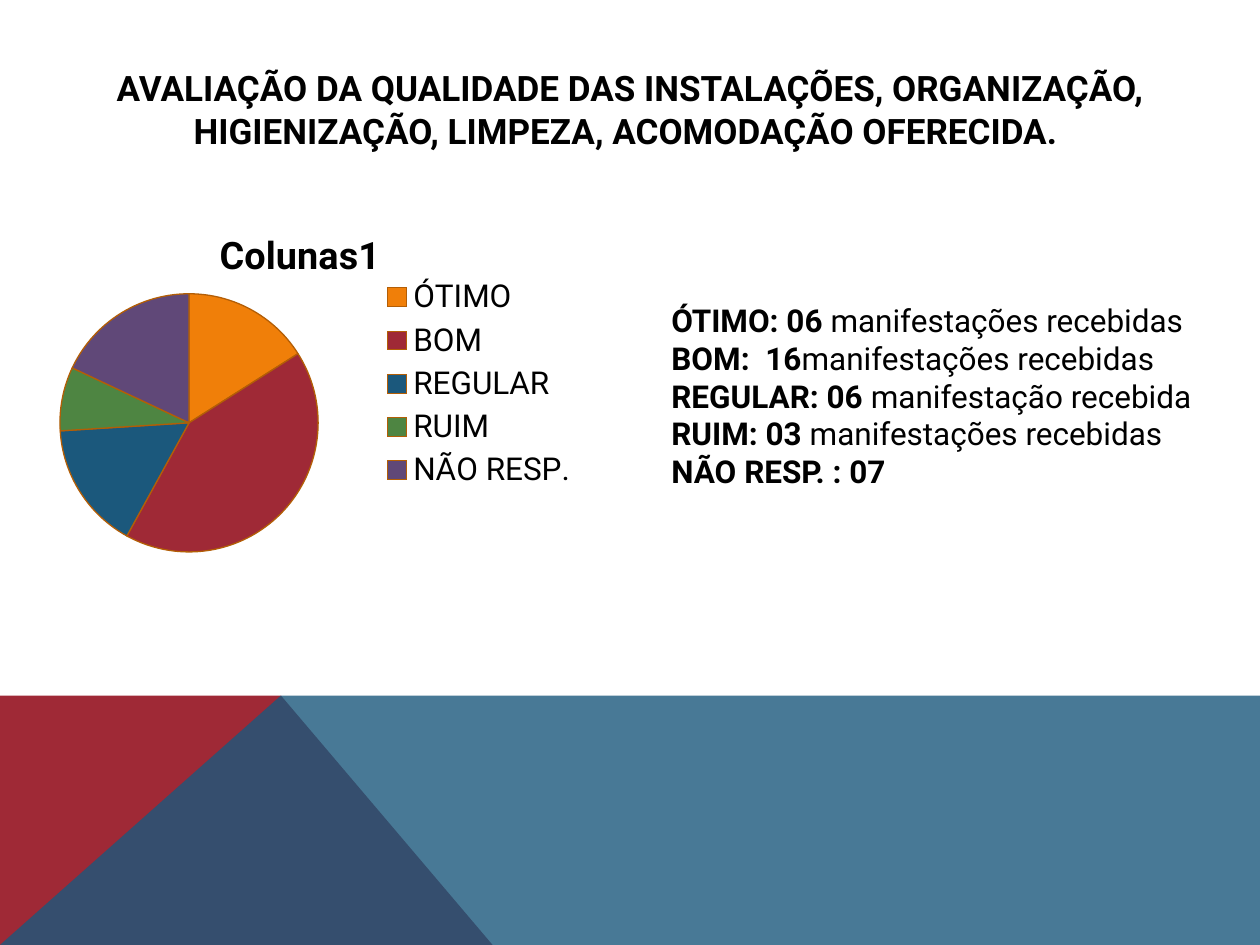
from lxml.etree import SubElement
from pptx import Presentation
from pptx.chart.data import CategoryChartData
from pptx.dml.color import RGBColor
from pptx.enum.chart import XL_CHART_TYPE, XL_LEGEND_POSITION
from pptx.enum.text import MSO_ANCHOR, PP_ALIGN
from pptx.oxml import parse_xml
from pptx.oxml.ns import nsdecls, qn
from pptx.util import Inches, Pt

COLORS = {
    "text": "000000", "orange": "F07F09", "red": "9F2936", "blue": "1B587C",
    "green": "4E8542", "purple": "604878", "outline": "B35E06",
}
FONT = "Roboto"
TITLE = ("AVALIAÇÃO DA QUALIDADE DAS INSTALAÇÕES, ORGANIZAÇÃO, "
         "HIGIENIZAÇÃO, LIMPEZA, ACOMODAÇÃO OFERECIDA. ")
RATINGS = [
    ("ÓTIMO", 16, "orange"), ("BOM", 42, "red"), ("REGULAR", 16, "blue"),
    ("RUIM", 8, "green"), ("NÃO RESP.", 18, "purple"),
]
COUNTS = [
    ("ÓTIMO: 06", " manifestações recebidas"),
    ("BOM:  16", "manifestações recebidas"),
    ("REGULAR: 06 ", "manifestação recebida"),
    ("RUIM: 03", " manifestações recebidas"),
    ("NÃO RESP. : 07", ""),
]


def rgb(name):
    """Return the named colour."""
    return RGBColor.from_string(COLORS[name])


def style_font(font, size, bold=False):
    """Apply the slide's typeface and text colour."""
    font.name, font.size, font.bold = FONT, Pt(size), bold
    font.color.rgb = rgb("text")


def add_run(paragraph, text, size, bold):
    """Append one styled run."""
    run = paragraph.add_run()
    run.text = text
    style_font(run.font, size, bold)


def add_band(slide, points, color, opacity=100):
    """Draw one filled polygon of the footer."""
    corners = [(Inches(x), Inches(y)) for x, y in points]
    builder = slide.shapes.build_freeform(*corners[0], scale=1.0)
    builder.add_line_segments(corners[1:], close=True)
    band = builder.convert_to_shape()
    band.shadow.inherit = False
    band.fill.solid()
    band.fill.fore_color.rgb = rgb(color)
    band.line.fill.background()
    if opacity < 100:
        fill_color = band.fill._xPr.find(qn("a:solidFill"))[0]
        SubElement(fill_color, qn("a:alpha"), val=str(opacity * 1000))


def add_footer(slide, left, top, width, height):
    """Draw the footer: a red corner under a translucent blue band."""
    right, bottom = left + width, top + height
    peak, foot = left + 2.23, left + 3.91
    add_band(slide, [(left, bottom), (left, top), (peak, top), (foot, bottom)], "red")
    add_band(slide, [(left, bottom), (peak, top), (right, top), (right, bottom)],
             "blue", opacity=80)


def add_heading(slide, left, top, width, height):
    """Place and fill the title placeholder."""
    heading = slide.shapes.title
    heading.left, heading.top = Inches(left), Inches(top)
    heading.width, heading.height = Inches(width), Inches(height)
    frame = heading.text_frame
    frame.word_wrap = True
    frame.vertical_anchor = MSO_ANCHOR.MIDDLE
    frame.paragraphs[0].alignment = PP_ALIGN.CENTER
    add_run(frame.paragraphs[0], TITLE, 20, True)


def set_layout(element, position, **settings):
    """Give a chart part a manual layout in fractions of the chart."""
    for old in element.findall(qn("c:layout")):
        element.remove(old)
    layout = parse_xml(f"<c:layout {nsdecls('c')}><c:manualLayout/></c:layout>")
    for tag, value in settings.items():
        SubElement(layout[0], qn(f"c:{tag}"), val=str(value))
    element.insert(position, layout)


def add_ratings_pie(slide, left, top, width, height):
    """Add the pie of ratings with its title and legend."""
    data = CategoryChartData()
    data.categories = [label for label, _, _ in RATINGS]
    data.add_series("Colunas1", [share for _, share, _ in RATINGS])
    chart = slide.shapes.add_chart(
        XL_CHART_TYPE.PIE, Inches(left), Inches(top), Inches(width), Inches(height), data
    ).chart
    style_font(chart.font, 18)

    chart.has_title = True
    chart_title = chart.chart_title
    add_run(chart_title.text_frame.paragraphs[0], "Colunas1", 21.6, True)
    chart_title.include_in_layout = True
    set_layout(chart_title._element, 1, xMode="edge", yMode="edge", x=0.36, y=0.07)

    chart.has_legend = True
    chart.legend.position = XL_LEGEND_POSITION.RIGHT
    chart.legend.include_in_layout = True
    style_font(chart.legend.font, 18)

    pie = chart.plots[0]
    pie.vary_by_categories = True
    set_layout(chart._chartSpace.chart.plotArea, 0, layoutTarget="inner",
               xMode="edge", yMode="edge", x=0.1, y=0.26, w=0.44, h=0.69)
    for index, (_, _, color) in enumerate(RATINGS):
        wedge = pie.series[0].points[index].format
        wedge.fill.solid()
        wedge.fill.fore_color.rgb = rgb(color)
        wedge.line.color.rgb = rgb("outline")
        wedge.line.width = Pt(0.75)


def add_counts(slide, left, top, width, height):
    """List the number of responses for each rating."""
    frame = slide.shapes.add_textbox(
        Inches(left), Inches(top), Inches(width), Inches(height)
    ).text_frame
    frame.word_wrap = True
    for index, (count, unit) in enumerate(COUNTS):
        paragraph = frame.add_paragraph() if index else frame.paragraphs[0]
        add_run(paragraph, count, 18, True)
        if unit:
            add_run(paragraph, unit, 18, False)


def main():
    """Build and save the slide."""
    deck = Presentation()
    deck.slide_width, deck.slide_height = Inches(10), Inches(7.5)
    slide = deck.slides.add_slide(deck.slide_layouts[5])
    add_footer(slide, 0, 5.52, 10, 1.98)
    add_heading(slide, 0.47, 0.4, 9.06, 0.93)
    add_counts(slide, 5.23, 2.34, 4.38, 1.62)
    add_ratings_pie(slide, 0, 1.56, 4.69, 2.97)
    deck.save("out.pptx")


if __name__ == "__main__":
    main()
